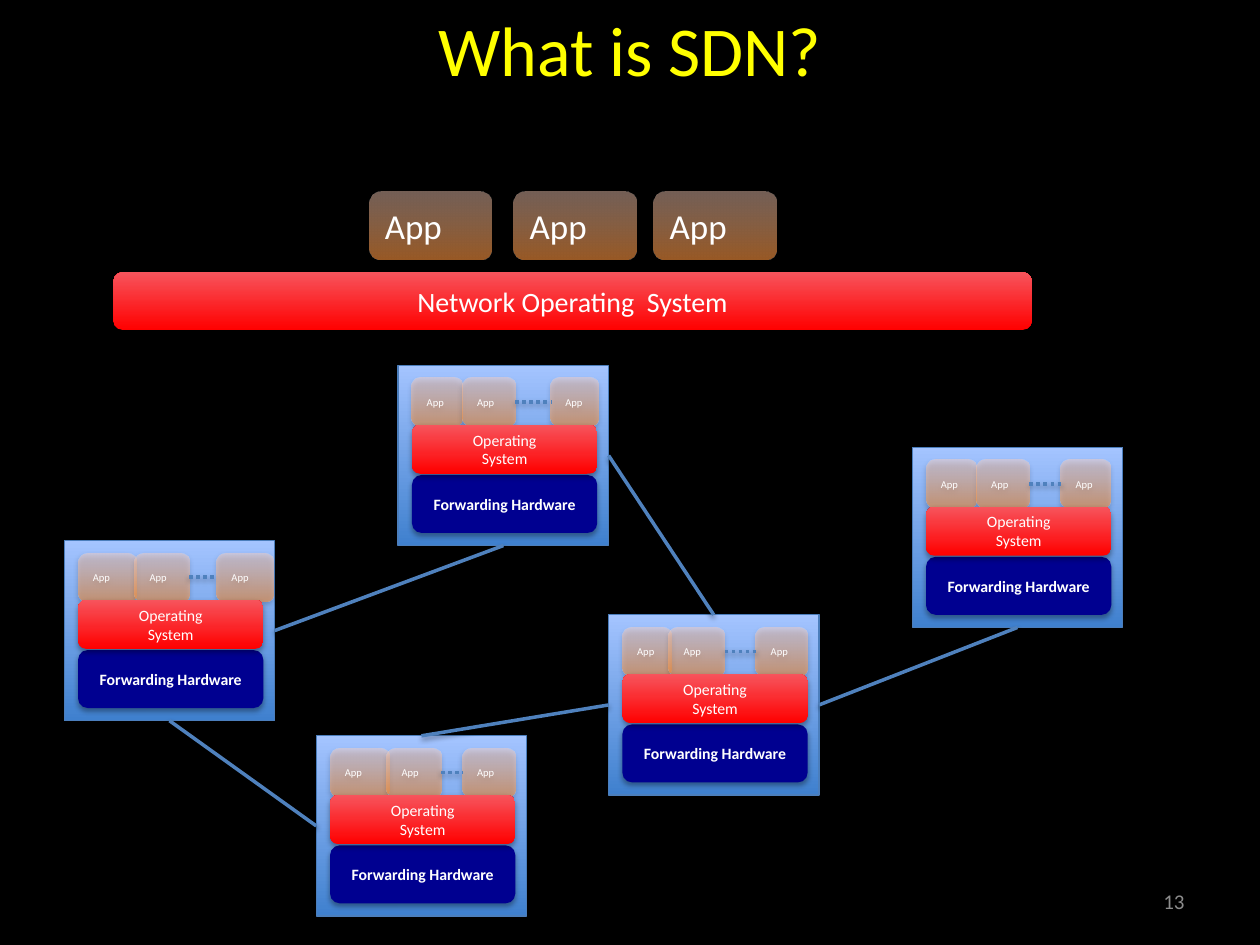
from lxml import etree
from pptx import Presentation
from pptx import util as u
from pptx.dml.color import RGBColor
from pptx.enum import dml, shapes, text
from pptx.oxml import ns

# Slide grid: 1000 columns by 750 rows; boxes are (column, row, columns, rows).
COLS, ROWS = 1000, 750
CELL = u.Inches(10) // COLS

RECT, ROUND = shapes.MSO_SHAPE.RECTANGLE, shapes.MSO_SHAPE.ROUNDED_RECTANGLE
LEFT, CENTER, RIGHT = text.PP_ALIGN.LEFT, text.PP_ALIGN.CENTER, text.PP_ALIGN.RIGHT
TOP_SIDE, LEFT_SIDE, BOTTOM_SIDE, RIGHT_SIDE = range(4)

# Gradients run bottom to top: (colour, opacity in percent).
BLUE = [("3F80CE", 100), ("A4C4FF", 100)]
RED = [("FF0000", 100), ("F7545C", 100)]
ORANGE = [("FF953E", 60), ("FFD2BD", 45)]
NAVY = "000090"

SWITCH_SIZE = (167, 143)
# name: (column, row, [(offset, width) of each app])
SWITCHES = {
    "west": (51, 429, [(11, 46), (56, 43), (121, 45)]),
    "north": (316, 290, [(11, 40), (51, 42), (121, 38)]),
    "east": (724, 355, [(11, 40), (51, 42), (118, 39)]),
    "south": (251, 584, [(11, 47), (56, 43), (116, 42)]),
    "middle": (483, 488, [(11, 39), (48, 44), (117, 41)]),
}
LINKS = [
    ("west", RIGHT_SIDE, "north", BOTTOM_SIDE),
    ("north", RIGHT_SIDE, "middle", TOP_SIDE),
    ("south", TOP_SIDE, "middle", LEFT_SIDE),
    ("west", BOTTOM_SIDE, "south", LEFT_SIDE),
    ("middle", RIGHT_SIDE, "east", BOTTOM_SIDE),
]


def rgb(color):
    return RGBColor.from_string(color)


def grid(*cells):
    return [u.Emu(c * CELL) for c in cells]


def add_shadow(sp, opacity, distance):
    """Put a soft downward shadow on a shape or connector."""
    props = sp._element.spPr
    effects = props.find(ns.qn("a:effectLst"))
    if effects is None:
        effects = etree.SubElement(props, ns.qn("a:effectLst"))
    shadow = etree.SubElement(
        effects, ns.qn("a:outerShdw"), blurRad=str(u.Pt(3.1)),
        dist=str(u.Pt(distance)), dir="5400000", rotWithShape="0")
    color = etree.SubElement(shadow, ns.qn("a:srgbClr"), val="000000")
    etree.SubElement(color, ns.qn("a:alpha"), val=str(opacity * 1000))


def paint(sp, fill):
    """Fill with one colour, or with a gradient given as a list."""
    if isinstance(fill, str):
        sp.fill.solid()
        sp.fill.fore_color.rgb = rgb(fill)
        return
    sp.fill.gradient()
    sp.fill.gradient_angle = 90
    for stop, (color, _) in zip(sp.fill.gradient_stops, fill):
        stop.color.rgb = rgb(color)
    colors = sp._element.spPr.xpath("a:gradFill//a:srgbClr")
    for node, (_, opacity) in zip(colors, fill):
        if opacity < 100:
            etree.SubElement(node, ns.qn("a:alpha"), val=str(opacity * 1000))


def write(sp, lines, size, color="FFFFFF", align=CENTER,
          anchor=text.MSO_ANCHOR.MIDDLE, bold=False):
    tf = sp.text_frame
    for name, value in {"word_wrap": True, "vertical_anchor": anchor,
                        "auto_size": text.MSO_AUTO_SIZE.NONE}.items():
        setattr(tf, name, value)
    font = {"name": "Calibri", "size": u.Pt(size), "bold": bold}
    for i, line in enumerate(lines):
        p = tf.add_paragraph() if i else tf.paragraphs[0]
        p.alignment = align
        r = p.add_run()
        r.text = line
        for name, value in font.items():
            setattr(r.font, name, value)
        r.font.color.rgb = rgb(color)


def add_block(parent, kind, box, fill):
    sp = parent.shapes.add_shape(kind, *grid(*box))
    sp.shadow.inherit = False
    paint(sp, fill)
    sp.line.fill.background()
    add_shadow(sp, 35, 1.8)
    return sp


def add_line(parent, start=(0, 0), end=(0, 0)):
    line = parent.shapes.add_connector(
        shapes.MSO_CONNECTOR.STRAIGHT, *grid(*start, *end))
    line.line.color.rgb = rgb("4F81BD")
    line.line.width = u.Pt(2)
    add_shadow(line, 38, 1.6)
    return line


def add_apps(s, row, height, spans, size):
    """Group a row of apps; spans holds each app's (column, columns)."""
    group = s.shapes.add_group_shape()
    for col, width in spans:
        app = add_block(group, ROUND, (col, row, width, height), ORANGE)
        write(app, ["App"], size, align=LEFT)
    return group


def add_switch(s, col, row, apps):
    box = add_block(s, RECT, (col, row, *SWITCH_SIZE), BLUE)
    box.line.color.rgb = rgb("4B7EBC")
    box.line.width = u.Pt(0.75)

    hardware = add_block(s, ROUND, (col + 11, row + 87, 147, 46), NAVY)
    write(hardware, ["Forwarding Hardware"], 9, bold=True)

    spans = [(col + offset, width) for offset, width in apps]
    group = add_apps(s, row + 10, 38, spans, 6)
    middle = row + 29
    dots = add_line(group, (sum(spans[1]), middle), (spans[2][0], middle))
    dots.line.dash_style = dml.MSO_LINE.ROUND_DOT

    system = add_block(s, ROUND, (col + 11, row + 47, 147, 39), RED)
    write(system, ["Operating", "System"], 9)
    return box


def add_network(s):
    nodes = {name: add_switch(s, *place) for name, place in SWITCHES.items()}
    for start, start_side, end, end_side in LINKS:
        link = add_line(s)
        link.begin_connect(nodes[start], start_side)
        link.end_connect(nodes[end], end_side)


def add_control_layer(s):
    system = add_block(s, ROUND, (90, 216, 729, 46), RED)
    write(system, ["Network Operating  System"], 16)
    add_apps(s, 152, 54, [(col, 97) for col in (293, 408, 519)], 20)


def add_heading(s, box):
    title = s.shapes.title
    title.left, title.top, title.width, title.height = grid(*box)
    write(title, ["What is SDN?"], 40, "FFFF00", anchor=text.MSO_ANCHOR.TOP)


def add_page_number(s, box):
    write(s.shapes.add_textbox(*grid(*box)), ["13"], 12, "8C8C8C", RIGHT)


def main():
    prs = Presentation()
    prs.slide_width, prs.slide_height = grid(COLS, ROWS)
    s = prs.slides.add_slide(prs.slide_layouts[5])
    s.background.fill.solid()
    s.background.fill.fore_color.rgb = rgb("000000")
    add_network(s)
    add_control_layer(s)
    add_heading(s, (50, 0, 900, 58))
    add_page_number(s, (717, 695, 233, 40))
    prs.save("out.pptx")


if __name__ == "__main__":
    main()
